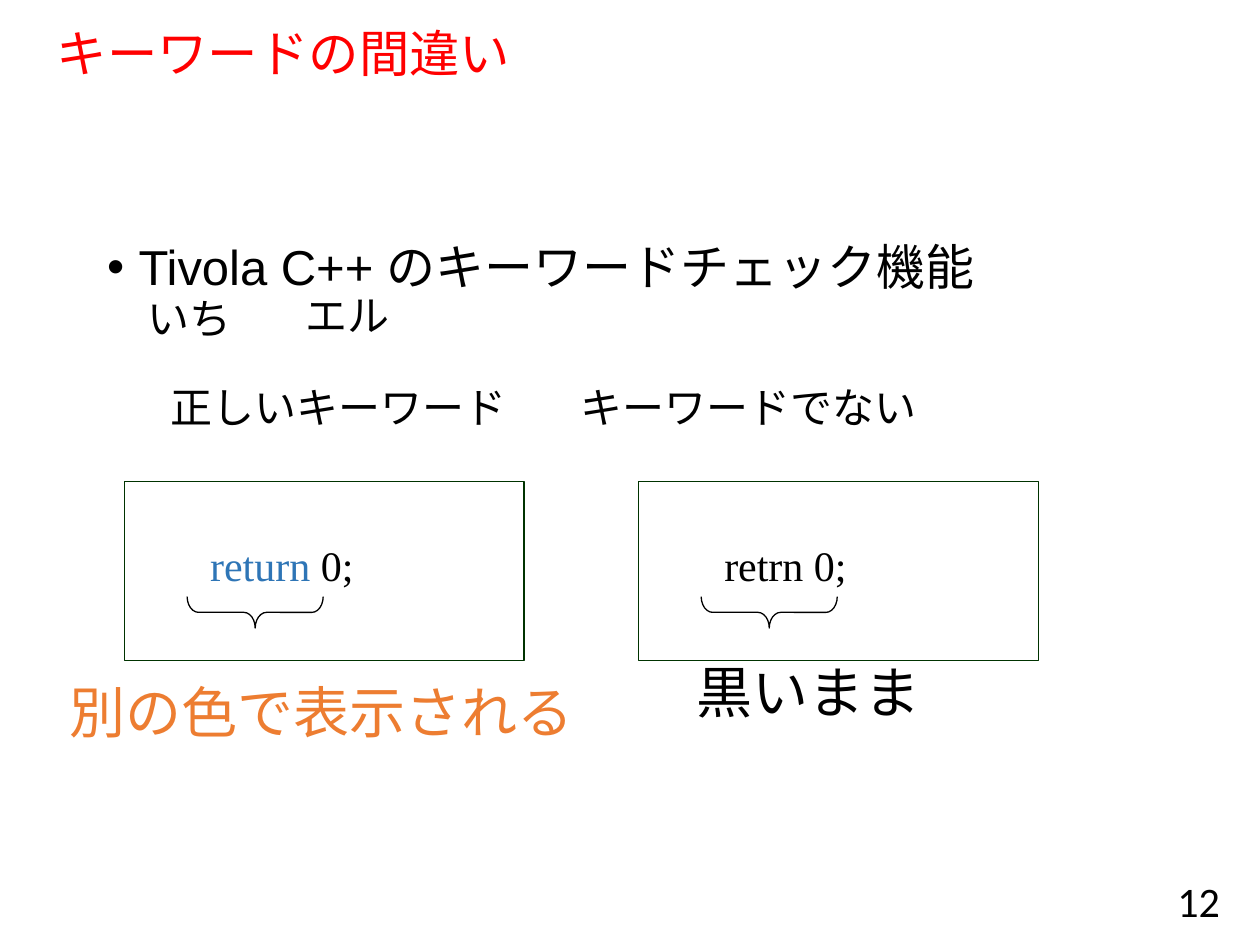
from lxml import etree
from pptx import Presentation
from pptx.dml.color import RGBColor
from pptx.enum import shapes, text
from pptx.oxml import ns
from pptx.util import Inches, Pt

BLACK = RGBColor(0, 0, 0)
RED = RGBColor(0xFF, 0, 0)
BLUE = RGBColor(0x2E, 0x75, 0xB6)
ORANGE = RGBColor(0xED, 0x7D, 0x31)
GREEN = RGBColor(0, 0x33, 0)


def style(font, size, color, face="Calibri"):
    font.size, font.name = Pt(size), face
    font.color.rgb = color


def place(shape, x, y, w, h):
    shape.left, shape.top = Inches(x), Inches(y)
    shape.width, shape.height = Inches(w), Inches(h)


def add_label(slide, box, parts, size, face="Calibri", wrap=False):
    label = slide.shapes.add_textbox(*map(Inches, box))
    frame = label.text_frame
    frame.word_wrap = wrap
    para = frame.paragraphs[0]
    for words, color in parts:
        run = para.add_run()
        run.text = words
        style(run.font, size, color, face)
    return label


def add_outline(slide, kind, box, color):
    shape = slide.shapes.add_shape(kind, *map(Inches, box))
    shape.shadow.inherit = False
    shape.fill.background()
    shape.line.color.rgb = color
    shape.line.width = Pt(0.75)
    return shape


def add_title(slide, box, words):
    title = slide.shapes.title
    place(title, *box)
    frame = title.text_frame
    frame.text = words
    frame.vertical_anchor = text.MSO_ANCHOR.MIDDLE
    para = frame.paragraphs[0]
    para.alignment = text.PP_ALIGN.LEFT
    para.line_spacing = 0.9
    style(para.runs[0].font, 28.8, RED, "Arial")


def add_body(slide, box, lead, heads):
    body = slide.placeholders[1]
    place(body, *box)
    frame = body.text_frame
    frame.text = lead
    frame.auto_size = text.MSO_AUTO_SIZE.NONE
    first, second = frame.paragraphs[0], frame.add_paragraph()
    second.level = 1
    left, right = heads
    for words in (left, " ", right):
        second.add_run().text = words
    for para, margin, gap, size in ((first, 0.25, 0, 28), (second, 0.75, 49, 24)):
        props = para._p.get_or_add_pPr()
        props.set("marL", str(Inches(margin)))
        props.set("indent", str(Inches(-0.25)))
        if para is first:
            bullet = etree.SubElement(props, ns.qn("a:buChar"))
            bullet.set("char", "•")
        else:
            etree.SubElement(props, ns.qn("a:buNone"))
        para.line_spacing = 1.0
        para.space_before = Pt(gap)
        for run in para.runs:
            style(run.font, size, BLACK, "Arial")
    second.runs[1]._r.get_or_add_rPr().set("spc", "3700")


def add_code(slide, box, width, parts):
    x, y, _, _ = box
    add_outline(slide, shapes.MSO_SHAPE.RECTANGLE, box, GREEN)
    add_label(slide, (x + 0.58, y + 0.41, width, 0.5), parts, 24, "Times New Roman")
    brace = add_outline(slide, shapes.MSO_SHAPE.RIGHT_BRACE,
                        (x + 0.91, y + 0.5, 0.25, 1.08), BLACK)
    brace.rotation = 90
    brace.adjustments[0] = 0.36


def add_number(slide, box, words):
    label = add_label(slide, box, [(words, BLACK)], 24, wrap=True)
    label.text_frame.vertical_anchor = text.MSO_ANCHOR.MIDDLE
    label.text_frame.paragraphs[0].alignment = text.PP_ALIGN.RIGHT


def main():
    deck = Presentation()
    deck.slide_width, deck.slide_height = Inches(10), Inches(7.5)
    slide = deck.slides.add_slide(deck.slide_layouts[1])
    add_title(slide, (0.35, 0.19, 9.25, 0.51), "キーワードの間違い")
    add_body(slide, (0.75, 1.83, 8.5, 4.5), "Tivola C++ のキーワードチェック機能",
             ("正しいキーワード", "キーワードでない"))
    add_code(slide, (0.99, 3.82, 3.17, 1.42), 1.4,
             [("return ", BLUE), ("0;", BLACK)])
    add_code(slide, (5.07, 3.82, 3.17, 1.42), 1.17, [("retrn 0;", BLACK)])
    for box, words, size, color in (
        ((0.45, 5.33, 4.24, 0.64), "別の色で表示される", 32, ORANGE),
        ((5.43, 5.17, 2, 0.64), "黒いまま", 32, BLACK),
        ((1.07, 2.27, 0.88, 0.5), "いち", 24, BLACK),
        ((2.33, 2.25, 0.88, 0.5), "エル", 24, BLACK),
    ):
        add_label(slide, box, [(words, color)], size)
    add_number(slide, (7.53, 6.95, 2.25, 0.4), "12")
    deck.save("out.pptx")


if __name__ == "__main__":
    main()
